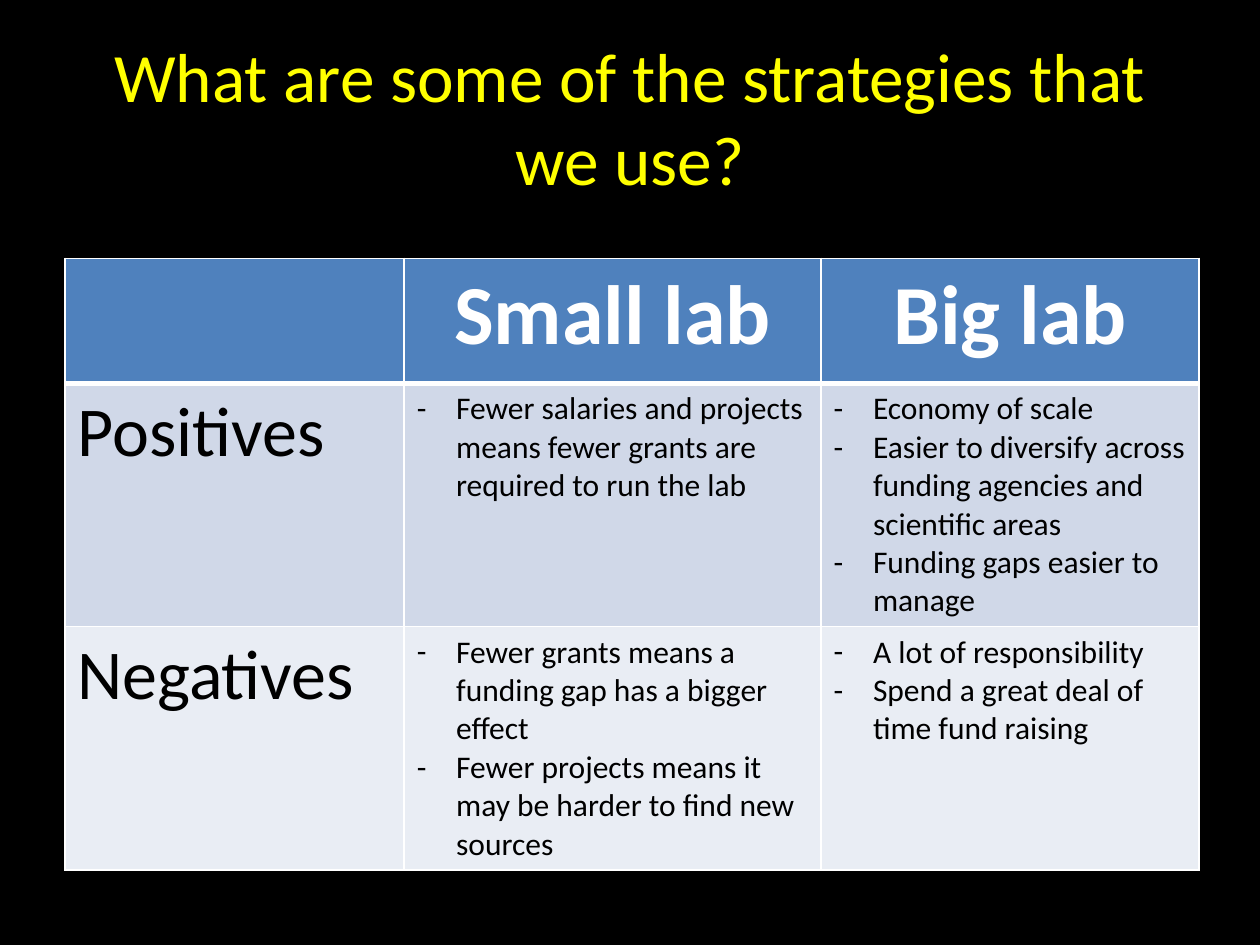
from lxml.etree import SubElement
from pptx import Presentation
from pptx.dml.color import RGBColor
from pptx.enum.text import MSO_ANCHOR as Anchor, PP_ALIGN as Align
from pptx.oxml.ns import qn
from pptx.util import Pt

BLACK = RGBColor(0x00, 0x00, 0x00)
WHITE = RGBColor(0xFF, 0xFF, 0xFF)
YELLOW = RGBColor(0xFF, 0xFF, 0x00)
HEADER_BLUE = RGBColor(0x4F, 0x81, 0xBD)
BAND_DARK = RGBColor(0xD0, 0xD8, 0xE8)
BAND_LIGHT = RGBColor(0xE9, 0xED, 0xF4)


class SlideBuilder:
    """Holds the text styles and the current slide."""

    title_style = {"size": Pt(39.6), "bold": False, "color": YELLOW}
    header_style = {"size": Pt(48), "bold": True, "color": WHITE}
    label_style = {"size": Pt(40), "bold": False, "color": BLACK}
    point_style = {"size": Pt(18), "bold": False, "color": BLACK}
    hanging = Pt(22.5)

    def __init__(self, slide):
        self.slide = slide

    def background(self, color):
        fill = self.slide.background.fill
        fill.solid()
        fill.fore_color.rgb = color

    def add_text(self, paragraph, text, style, align=Align.LEFT):
        paragraph.alignment = align
        run = paragraph.add_run()
        run.text = text
        font = run.font
        font.name = "Calibri"
        for name, value in style.items():
            if name == "color":
                font.color.rgb = value
            else:
                setattr(font, name, value)

    def title(self, text, **box):
        heading = self.slide.shapes.title
        for name, value in box.items():
            setattr(heading, name, Pt(value))
        frame = heading.text_frame
        frame.word_wrap = True
        frame.vertical_anchor = Anchor.MIDDLE
        self.add_text(frame.paragraphs[0], text, self.title_style, Align.CENTER)

    def points(self, cell, texts):
        frame = cell.text_frame
        for index, text in enumerate(texts):
            paragraph = frame.add_paragraph() if index else frame.paragraphs[0]
            self.add_text(paragraph, text, self.point_style)
            properties = paragraph._p.get_or_add_pPr()
            properties.set("marL", str(self.hanging))
            properties.set("indent", str(-self.hanging))
            SubElement(properties, qn("a:buFont"), typeface="Calibri")
            SubElement(properties, qn("a:buChar"), char="-")

    def cell_format(self, cell, color, borders):
        properties = cell._tc.get_or_add_tcPr()
        for side, width in borders.items():
            line = SubElement(properties, qn(f"a:ln{side}"), w=str(Pt(width)))
            paint = SubElement(line, qn("a:solidFill"))
            SubElement(paint, qn("a:srgbClr"), val=str(WHITE))
        cell.fill.solid()
        cell.fill.fore_color.rgb = color

    def table(self, headers, body, left, top, widths, heights):
        grid = self.slide.shapes.add_table(
            len(heights), len(widths), Pt(left), Pt(top),
            Pt(sum(widths)), Pt(sum(heights))).table
        for column, width in zip(grid.columns, widths):
            column.width = Pt(width)
        for row, height in zip(grid.rows, heights):
            row.height = Pt(height)

        # Header row, set off by a thick rule
        for column, text in enumerate(headers):
            cell = grid.cell(0, column)
            self.cell_format(cell, HEADER_BLUE, {"L": 1, "R": 1, "T": 1, "B": 3})
            if text:
                self.add_text(cell.text_frame.paragraphs[0], text,
                              self.header_style, Align.CENTER)

        # Banded body rows: a label, then lists of points
        for row, (label, *lists) in enumerate(body, start=1):
            band = BAND_DARK if row % 2 else BAND_LIGHT
            borders = {"L": 1, "R": 1, "T": 3 if row == 1 else 1, "B": 1}
            for cell in grid.rows[row].cells:
                self.cell_format(cell, band, borders)
            self.add_text(grid.cell(row, 0).text_frame.paragraphs[0], label,
                          self.label_style)
            for column, texts in enumerate(lists, start=1):
                self.points(grid.cell(row, column), texts)


def main():
    deck = Presentation()
    deck.slide_width, deck.slide_height = Pt(720), Pt(540)
    builder = SlideBuilder(deck.slides.add_slide(deck.slide_layouts[5]))
    builder.background(BLACK)
    builder.title("What are some of the strategies that we use?",
                  left=36, top=21.6, width=648, height=90)

    # Comparison of lab sizes
    lab_sizes = ["", "Small lab", "Big lab"]
    comparison = [
        ("Positives",
         ["Fewer salaries and projects means fewer grants are required "
          "to run the lab"],
         ["Economy of scale",
          "Easier to diversify across funding agencies and scientific areas",
          "Funding gaps easier to manage"]),
        ("Negatives",
         ["Fewer grants means a funding gap has a bigger effect",
          "Fewer projects means it may be harder to find new sources"],
         ["A lot of responsibility",
          "Spend a great deal of time fund raising"]),
    ]
    builder.table(lab_sizes, comparison, left=37.2, top=147.6,
                  widths=[193.8, 238.2, 216], heights=[71.5, 111.6, 111.6])
    deck.save("out.pptx")


if __name__ == "__main__":
    main()
